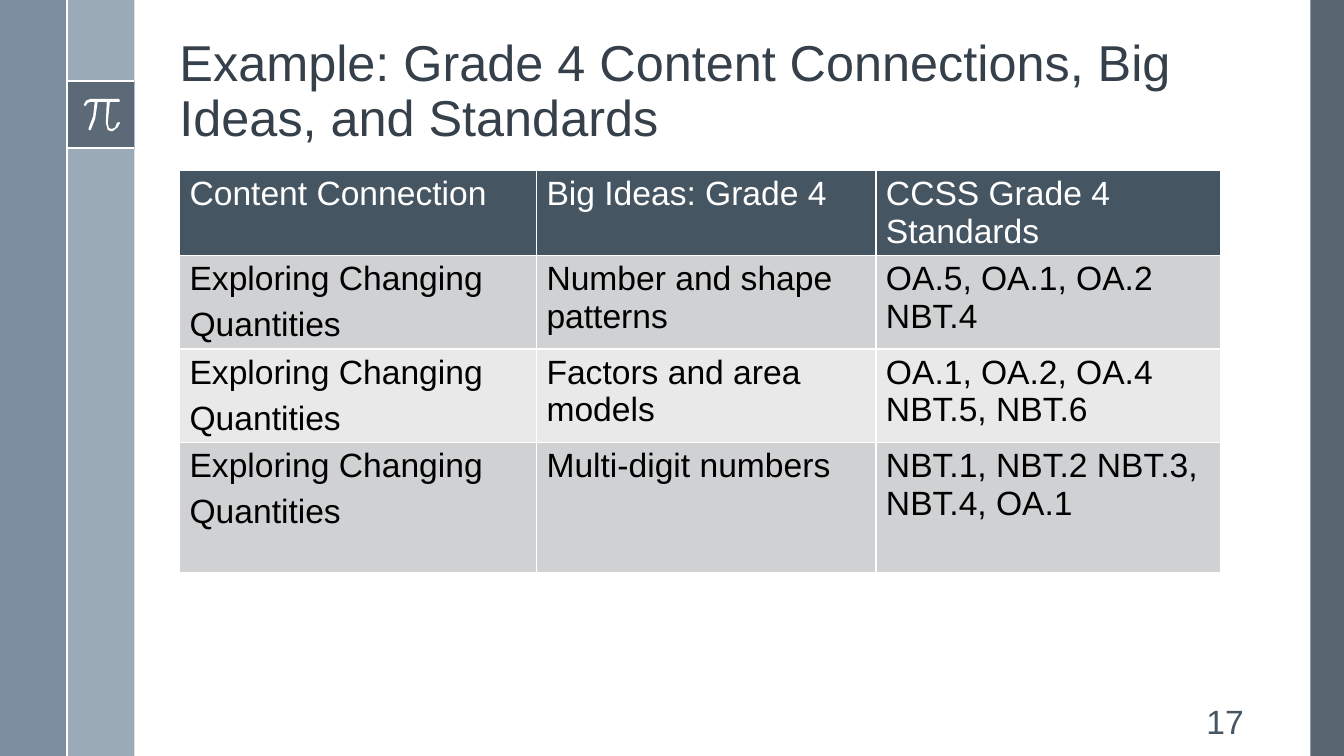
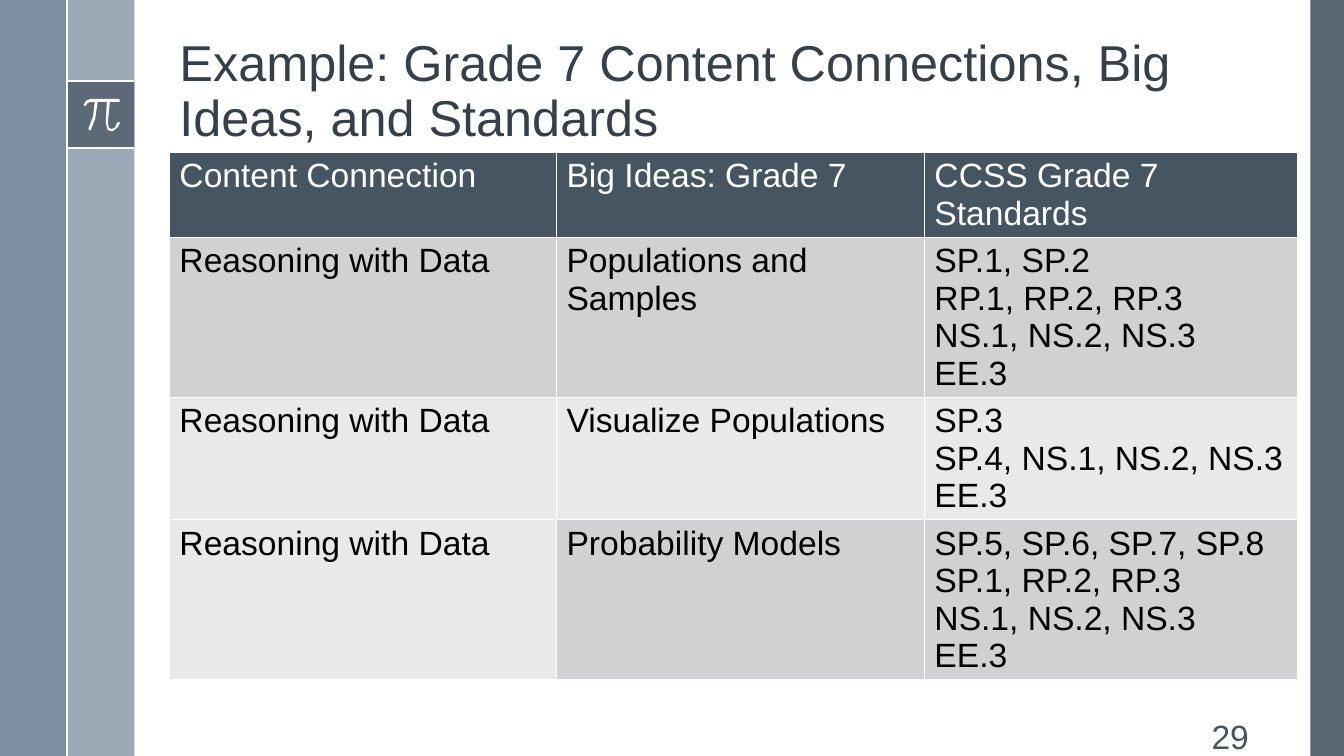
from dataclasses import dataclass

import lxml.etree
import pptx
import pptx.dml.color
import pptx.enum.dml
import pptx.enum.shapes
import pptx.enum.text
import pptx.oxml.ns
import pptx.presentation
import pptx.shapes.autoshape
import pptx.slide
import pptx.text.text
import pptx.util

Pt = pptx.util.Pt
qn = pptx.oxml.ns.qn

FONT = "Arial"
WHITE = "FFFFFF"
BLACK = "000000"
TITLE_COLOR = "35404A"
HEADER_COLOR = "465562"
SLATE = "475562"
DARK_ROW = "CFD1D3"
LIGHT_ROW = "E9E9EA"

PAGE_WIDTH, PAGE_HEIGHT = 960, 540
BAND = 48
TILE_TOP = 58
PI_OUTLINE = [
    (85, 70.6), (64.8, 70.6), (61.6, 71.8), (59.8, 74.9), (60.5, 75.6),
    (61.2, 75.6), (62.6, 73.5), (64.8, 72.7), (67.7, 72.7), (66.6, 82.8),
    (63.4, 91.4), (63.4, 92.9), (64.8, 92.9), (68, 85), (69.8, 72.7),
    (76.3, 72.7), (75.6, 87.8), (77, 92.9), (79.2, 93.6), (80.6, 93.6),
    (84, 91), (85.7, 87.8), (85, 87.1), (83.5, 87.8), (82.3, 91),
    (79.9, 92.2), (77.8, 91.4), (77, 87.8), (78.5, 72.7), (85, 72.7),
    (85.7, 72),
]


@dataclass(frozen=True)
class Band:
    left: float
    top: float
    width: float
    height: float
    color: str
    opacity: int = 100


@dataclass(frozen=True)
class Rule:
    x1: float
    y1: float
    x2: float
    y2: float


@dataclass(frozen=True)
class Row:
    height: float
    cells: tuple[str, str, str]
    fills: tuple[str, str, str]


@dataclass(frozen=True)
class StandardsPage:
    grade: int
    number: int
    table_left: float
    table_top: float
    columns: tuple[float, float, float]
    rows: list[Row]
    number_left: float
    number_top: float


BANDS = [
    Band(936, 0, 24, PAGE_HEIGHT, SLATE, 90),
    Band(BAND, 0, BAND, PAGE_HEIGHT, "9BAAB7"),
    Band(0, 0, BAND, PAGE_HEIGHT, "6A8093", 88),
    Band(BAND, TILE_TOP, BAND, BAND, SLATE, 75),
]
RULES = [
    Rule(BAND, TILE_TOP, 2 * BAND, TILE_TOP),
    Rule(BAND, TILE_TOP + BAND, 2 * BAND, TILE_TOP + BAND),
    Rule(BAND, 0, BAND, PAGE_HEIGHT),
]

CHANGING = "Exploring Changing\nQuantities"
DATA = "Reasoning with Data"
ALL_DARK = (DARK_ROW,) * 3
ALL_LIGHT = (LIGHT_ROW,) * 3

PAGES = [
    StandardsPage(
        4, 17, 128.2, 121.7, (255, 242.5, 246.5),
        [
            Row(66.6, (CHANGING, "Number and shape patterns",
                       "OA.5, OA.1, OA.2\nNBT.4"), ALL_DARK),
            Row(66.6, (CHANGING, "Factors and area models",
                       "OA.1, OA.2, OA.4\nNBT.5, NBT.6"), ALL_LIGHT),
            Row(93.4, (CHANGING, "Multi-digit numbers",
                       "NBT.1, NBT.2 NBT.3, NBT.4, OA.1"), ALL_DARK),
        ],
        847.4, 500.4,
    ),
    StandardsPage(
        7, 29, 121, 108.7, (276.5, 262.8, 266.4),
        [
            Row(114.2, (DATA, "Populations and Samples",
                        "SP.1, SP.2\vRP.1, RP.2, RP.3\nNS.1, NS.2, NS.3\nEE.3"),
                ALL_DARK),
            Row(87.4, (DATA, "Visualize Populations",
                       "SP.3\nSP.4, NS.1, NS.2, NS.3\nEE.3"), ALL_LIGHT),
            Row(114.2, (DATA, "Probability Models",
                        "SP.5, SP.6, SP.7, SP.8\nSP.1, RP.2, RP.3\n"
                        "NS.1, NS.2, NS.3\nEE.3"),
                (LIGHT_ROW, DARK_ROW, DARK_ROW)),
        ],
        851, 511.2,
    ),
]


def rgb(color: str) -> pptx.dml.color.RGBColor:
    return pptx.dml.color.RGBColor.from_string(color)


def paint(shape: pptx.shapes.autoshape.Shape, color: str, opacity: int = 100) -> None:
    """Give a shape a flat fill with no outline or shadow."""
    shape.shadow.inherit = False
    shape.line.fill.background()
    shape.fill.solid()
    shape.fill.fore_color.rgb = rgb(color)
    if opacity < 100:
        solid = shape.fill.fore_color._xFill
        alpha = lxml.etree.SubElement(solid[0], qn("a:alpha"))
        alpha.set("val", str(opacity * 1000))


def style_text(frame: pptx.text.text.TextFrame, size: float, color: str) -> None:
    for para in frame.paragraphs:
        para.font.name = FONT
        para.font.size = Pt(size)
        para.font.bold = False
        para.font.color.rgb = rgb(color)


def draw_frame(page: pptx.slide.Slide) -> None:
    """Draw the side bands, white rules and pi tile."""
    for band in BANDS:
        box = page.shapes.add_shape(
            pptx.enum.shapes.MSO_SHAPE.RECTANGLE,
            Pt(band.left), Pt(band.top), Pt(band.width), Pt(band.height))
        paint(box, band.color, band.opacity)
    for rule in RULES:
        line = page.shapes.add_connector(
            pptx.enum.shapes.MSO_CONNECTOR.STRAIGHT,
            Pt(rule.x1), Pt(rule.y1), Pt(rule.x2), Pt(rule.y2))
        line.line.color.rgb = rgb(WHITE)
        line.line.width = Pt(1.5)
        lxml.etree.SubElement(line._element.spPr, qn("a:effectLst"))
    start, *others = [(Pt(x), Pt(y)) for x, y in PI_OUTLINE]
    builder = page.shapes.build_freeform(*start)
    builder.add_line_segments(others, close=True)
    paint(builder.convert_to_shape(), WHITE)


def draw_title(page: pptx.slide.Slide, text: str) -> None:
    title = page.shapes.title
    title.left, title.top = Pt(121), Pt(10.8)
    title.width, title.height = Pt(787.7), Pt(97.9)
    frame = title.text_frame
    frame.text = text
    frame.word_wrap = True
    frame.auto_size = pptx.enum.text.MSO_AUTO_SIZE.NONE
    frame.vertical_anchor = pptx.enum.text.MSO_ANCHOR.BOTTOM
    para = frame.paragraphs[0]
    para.alignment = pptx.enum.text.PP_ALIGN.LEFT
    para.line_spacing = 0.9
    style_text(frame, 36, TITLE_COLOR)


def draw_table(page: pptx.slide.Slide, content: StandardsPage) -> None:
    header = Row(
        60.8,
        ("Content Connection", f"Big Ideas: Grade {content.grade}",
         f"CCSS Grade {content.grade} Standards"),
        (HEADER_COLOR,) * 3)
    rows = [header, *content.rows]
    table = page.shapes.add_table(
        len(rows), len(content.columns), Pt(content.table_left), Pt(content.table_top),
        Pt(sum(content.columns)), Pt(sum(row.height for row in rows))).table
    for column, width in zip(table.columns, content.columns):
        column.width = Pt(width)
    for row_index, row in enumerate(rows):
        table.rows[row_index].height = Pt(row.height)
        for column_index, (text, fill) in enumerate(zip(row.cells, row.fills)):
            cell = table.cell(row_index, column_index)
            cell.fill.solid()
            cell.fill.fore_color.rgb = rgb(fill)
            cell.text_frame.text = text
            if column_index == 0:
                for para in cell.text_frame.paragraphs[1:]:
                    para.space_before = Pt(6)
            style_text(cell.text_frame, 24, WHITE if row is header else BLACK)


def draw_page_number(page: pptx.slide.Slide, content: StandardsPage) -> None:
    box = page.shapes.add_textbox(
        Pt(content.number_left), Pt(content.number_top), Pt(48.2), Pt(28.8))
    frame = box.text_frame
    frame.word_wrap = True
    frame.vertical_anchor = pptx.enum.text.MSO_ANCHOR.MIDDLE
    frame.text = str(content.number)
    frame.paragraphs[0].alignment = pptx.enum.text.PP_ALIGN.RIGHT
    style_text(frame, 24, HEADER_COLOR)


def add_page(deck: pptx.presentation.Presentation, content: StandardsPage) -> None:
    page = deck.slides.add_slide(deck.slide_layouts.get_by_name("Title Only"))
    draw_frame(page)
    draw_title(page, f"Example: Grade {content.grade} Content Connections, "
                     "Big Ideas, and Standards")
    draw_table(page, content)
    draw_page_number(page, content)


def main() -> None:
    deck = pptx.Presentation()
    deck.slide_width, deck.slide_height = Pt(PAGE_WIDTH), Pt(PAGE_HEIGHT)
    for content in PAGES:
        add_page(deck, content)
    deck.save("out.pptx")


if __name__ == "__main__":
    main()
